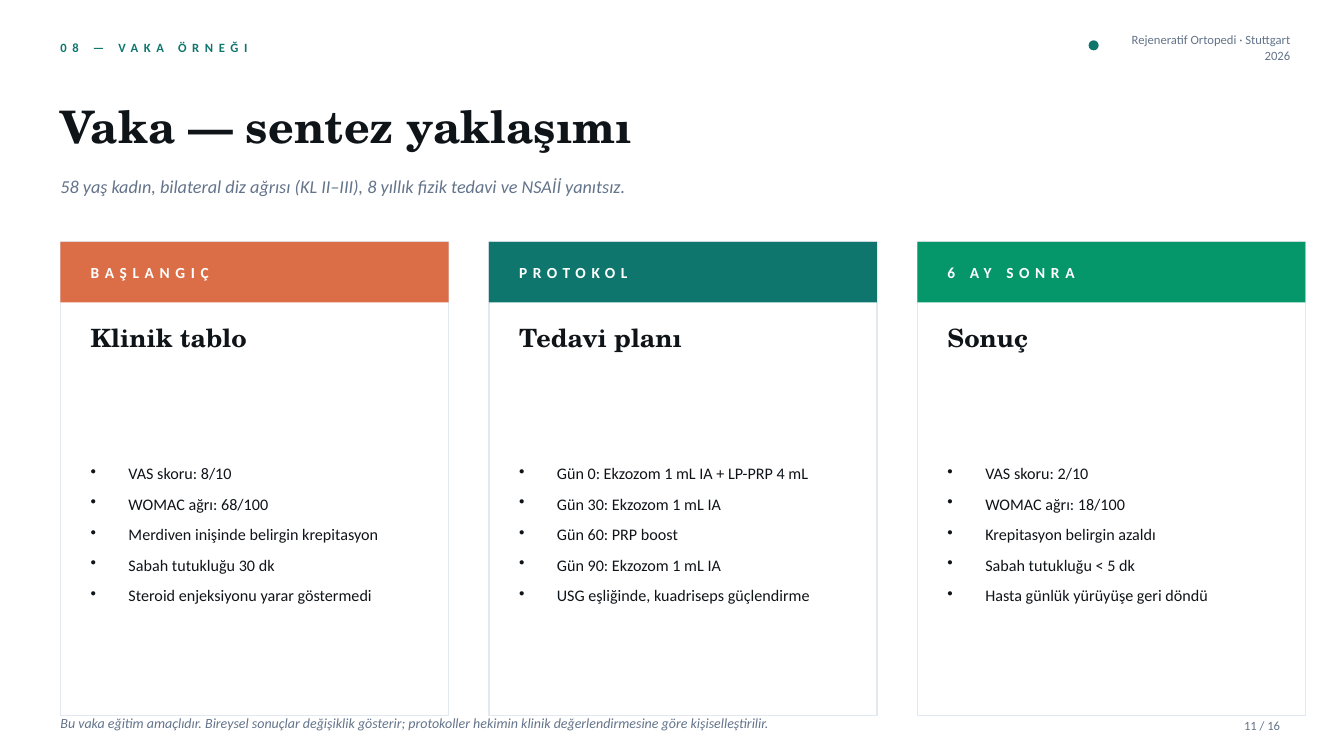
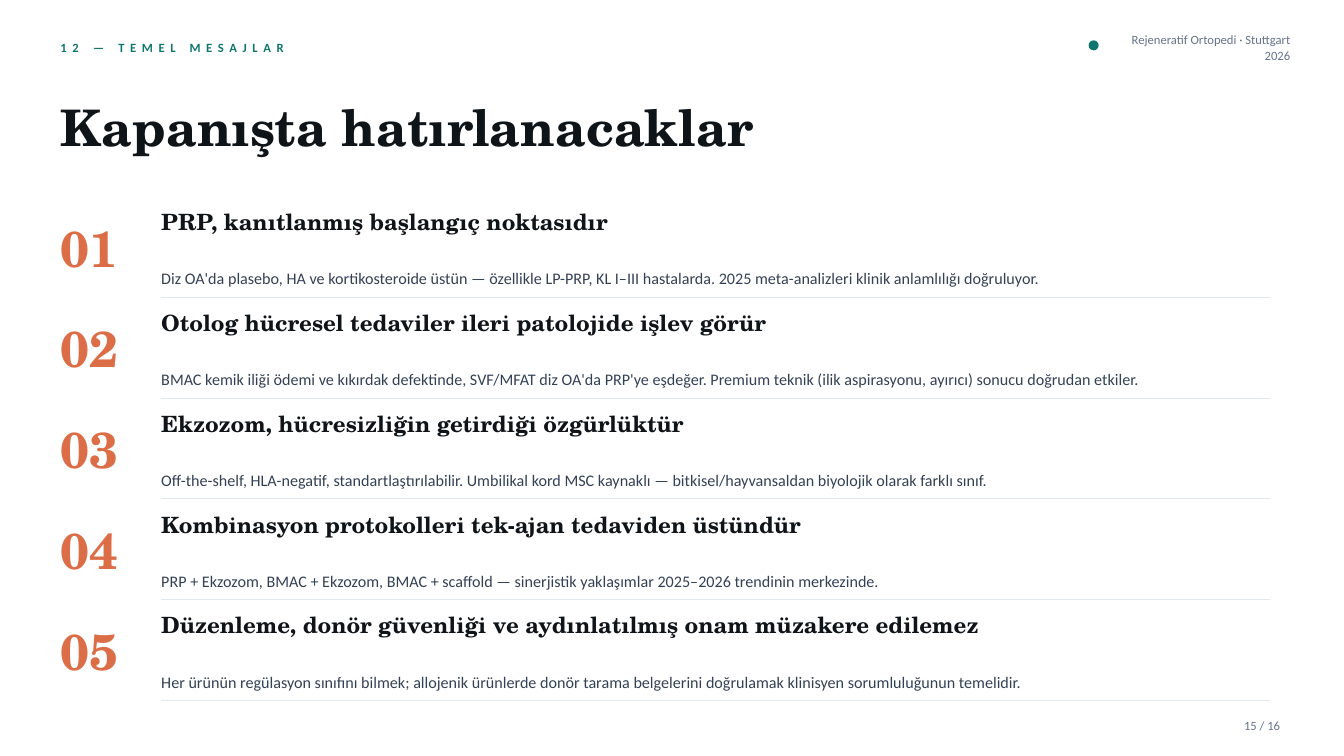
import lxml.etree
import pptx
import pptx.dml.color
import pptx.enum.shapes
import pptx.enum.text
import pptx.oxml.ns
import pptx.util

Pt = pptx.util.Pt
Align = pptx.enum.text.PP_ALIGN
Shape = pptx.enum.shapes.MSO_SHAPE
qn = pptx.oxml.ns.qn

INK = {
    "teal": "0F766E", "coral": "DC6E47", "green": "059669", "dark": "0F1419",
    "slate": "334155", "grey": "64748B", "rule": "E2E8F0", "white": "FFFFFF",
}
SANS, SERIF = "Calibri", "TeX Gyre Schola"
LEFT = 43.2

CARDS = [
    ("coral", "BAŞLANGIÇ", "Klinik tablo", [
        "VAS skoru: 8/10", "WOMAC ağrı: 68/100",
        "Merdiven inişinde belirgin krepitasyon",
        "Sabah tutukluğu 30 dk", "Steroid enjeksiyonu yarar göstermedi"]),
    ("teal", "PROTOKOL", "Tedavi planı", [
        "Gün 0: Ekzozom 1 mL IA + LP-PRP 4 mL", "Gün 30: Ekzozom 1 mL IA",
        "Gün 60: PRP boost", "Gün 90: Ekzozom 1 mL IA",
        "USG eşliğinde, kuadriseps güçlendirme"]),
    ("green", "6 AY SONRA", "Sonuç", [
        "VAS skoru: 2/10", "WOMAC ağrı: 18/100", "Krepitasyon belirgin azaldı",
        "Sabah tutukluğu < 5 dk", "Hasta günlük yürüyüşe geri döndü"]),
]

POINTS = [
    ("PRP, kanıtlanmış başlangıç noktasıdır",
     "Diz OA'da plasebo, HA ve kortikosteroide üstün — özellikle LP-PRP, KL I–III "
     "hastalarda. 2025 meta-analizleri klinik anlamlılığı doğruluyor."),
    ("Otolog hücresel tedaviler ileri patolojide işlev görür",
     "BMAC kemik iliği ödemi ve kıkırdak defektinde, SVF/MFAT diz OA'da PRP'ye eşdeğer. "
     "Premium teknik (ilik aspirasyonu, ayırıcı) sonucu doğrudan etkiler."),
    ("Ekzozom, hücresizliğin getirdiği özgürlüktür",
     "Off-the-shelf, HLA-negatif, standartlaştırılabilir. Umbilikal kord MSC kaynaklı — "
     "bitkisel/hayvansaldan biyolojik olarak farklı sınıf."),
    ("Kombinasyon protokolleri tek-ajan tedaviden üstündür",
     "PRP + Ekzozom, BMAC + Ekzozom, BMAC + scaffold — sinerjistik yaklaşımlar "
     "2025–2026 trendinin merkezinde."),
    ("Düzenleme, donör güvenliği ve aydınlatılmış onam müzakere edilemez",
     "Her ürünün regülasyon sınıfını bilmek; allojenik ürünlerde donör tarama "
     "belgelerini doğrulamak klinisyen sorumluluğunun temelidir."),
]


def tint(name):
    return pptx.dml.color.RGBColor.from_string(INK[name])


class Deck:
    """Holds the text styles and the slide being filled."""

    STYLES = {
        "label": (dict(name=SANS, size=Pt(9), bold=True), "teal"),
        "small": (dict(name=SANS, size=Pt(9)), "grey"),
        "title": (dict(name=SERIF, size=Pt(32), bold=True), "dark"),
        "large": (dict(name=SERIF, size=Pt(36), bold=True), "dark"),
        "lead": (dict(name=SANS, size=Pt(13), italic=True), "grey"),
        "note": (dict(name=SANS, size=Pt(10), italic=True), "grey"),
        "band": (dict(name=SANS, size=Pt(11), bold=True), "white"),
        "card": (dict(name=SERIF, size=Pt(18), bold=True), "dark"),
        "item": (dict(name=SANS, size=Pt(11.5)), "dark"),
        "count": (dict(name=SERIF, size=Pt(36), bold=True), "coral"),
        "head": (dict(name=SERIF, size=Pt(16), bold=True), "dark"),
        "body": (dict(name=SANS, size=Pt(11.5)), "slate"),
    }
    SPACED = {"label", "band"}
    FRAME = dict(word_wrap=True, margin_left=0, margin_right=0, margin_top=0,
                 margin_bottom=0, vertical_anchor=pptx.enum.text.MSO_ANCHOR.MIDDLE)

    def __init__(self):
        self.show = pptx.Presentation()
        self.show.slide_width, self.show.slide_height = Pt(960), Pt(540)
        self.slide = None

    def start(self, label, title, page, style):
        """Adds a slide with the shared header, title and page number."""
        self.slide = self.show.slides.add_slide(self.show.slide_layouts[6])
        self.text("label", label, LEFT, 23.04, 576, 21.6)
        self.shape(Shape.OVAL, "teal", 777.6, 28.8, 7.2, 7.2)
        self.text("small", "Rejeneratif Ortopedi · Stuttgart 2026",
                  788.4, 23.04, 133.2, 21.6, alignment=Align.RIGHT)
        self.text("small", f"{page} / 16", 849.6, 507.6, 64.8, 21.6,
                  alignment=Align.RIGHT)
        self.text(style, title, LEFT, 64.8, 864, 50.4)

    def text(self, style, words, x, y, w, h, bullet=False, **form):
        """Adds a text box; a list of words gives one paragraph each."""
        frame = self.slide.shapes.add_textbox(Pt(x), Pt(y), Pt(w), Pt(h)).text_frame
        for key, value in self.FRAME.items():
            setattr(frame, key, value)
        face, ink = self.STYLES[style]
        lines = words if isinstance(words, list) else [words]
        for i, line in enumerate(lines):
            para = frame.add_paragraph() if i else frame.paragraphs[0]
            for key, value in form.items():
                setattr(para, key, value)
            if bullet:
                self.dot(para)
            run = para.add_run()
            run.text = line
            for key, value in face.items():
                setattr(run.font, key, value)
            run.font.color.rgb = tint(ink)
            if style in self.SPACED:
                run.font._element.set("spc", "400")

    def dot(self, para):
        """Gives a paragraph a bullet with a hanging indent."""
        props = para._p.get_or_add_pPr()
        props.set("marL", str(Pt(27)))
        props.set("indent", str(-Pt(27)))
        lxml.etree.SubElement(props, qn("a:buChar")).set("char", "•")

    def shape(self, kind, fill, x, y, w, h, edge=None):
        form = self.slide.shapes.add_shape(kind, Pt(x), Pt(y), Pt(w), Pt(h))
        form.shadow.inherit = False
        form.fill.solid()
        form.fill.fore_color.rgb = tint(fill)
        if edge:
            form.line.color.rgb = tint(edge)
            form.line.width = Pt(1)
        else:
            form.line.fill.background()

    def rule(self, x, y, w):
        line = self.slide.shapes.add_connector(
            pptx.enum.shapes.MSO_CONNECTOR.STRAIGHT, Pt(x), Pt(y), Pt(x + w), Pt(y))
        line.line.color.rgb = tint("rule")
        line.line.width = Pt(0.75)
        lxml.etree.SubElement(line._element.spPr, qn("a:effectLst"))

    def card(self, x, ink, band, head, items):
        self.shape(Shape.RECTANGLE, "white", x, 172.8, 277.2, 338.4, edge="rule")
        self.shape(Shape.RECTANGLE, ink, x, 172.8, 277.2, 43.2)
        inner, wide = x + 21.6, 244.8
        self.text("band", band, inner, 180, wide, 28.8)
        self.text("card", head, inner, 226.8, wide, 28.8)
        self.text("item", items, inner, 266.4, wide, 230.4,
                  bullet=True, space_after=Pt(8))

    def point(self, y, count, head, body):
        x, wide = 115.2, 792
        self.text("count", f"{count:02}", LEFT, y, 64.8, 72)
        self.text("head", head, x, y + 3.6, wide, 28.8)
        self.text("body", body, x, y + 36, wide, 39.6, line_spacing=1.4)
        self.rule(x, y + 72, wide)


def main():
    deck = Deck()

    deck.start("08 — VAKA ÖRNEĞI", "Vaka — sentez yaklaşımı", 11, "title")
    deck.text("lead", "58 yaş kadın, bilateral diz ağrısı (KL II–III), "
              "8 yıllık fizik tedavi ve NSAİİ yanıtsız.", LEFT, 118.8, 864, 28.8)
    for i, card in enumerate(CARDS):
        deck.card(LEFT + 306 * i, *card)
    deck.text("note", "Bu vaka eğitim amaçlıdır. Bireysel sonuçlar değişiklik gösterir; "
              "protokoller hekimin klinik değerlendirmesine göre kişiselleştirilir.",
              LEFT, 504, 864, 25.2)

    deck.start("12 — TEMEL MESAJLAR", "Kapanışta hatırlanacaklar", 15, "large")
    for i, point in enumerate(POINTS):
        deck.point(140.4 + 72 * i, i + 1, *point)

    deck.show.save("out.pptx")


if __name__ == "__main__":
    main()
